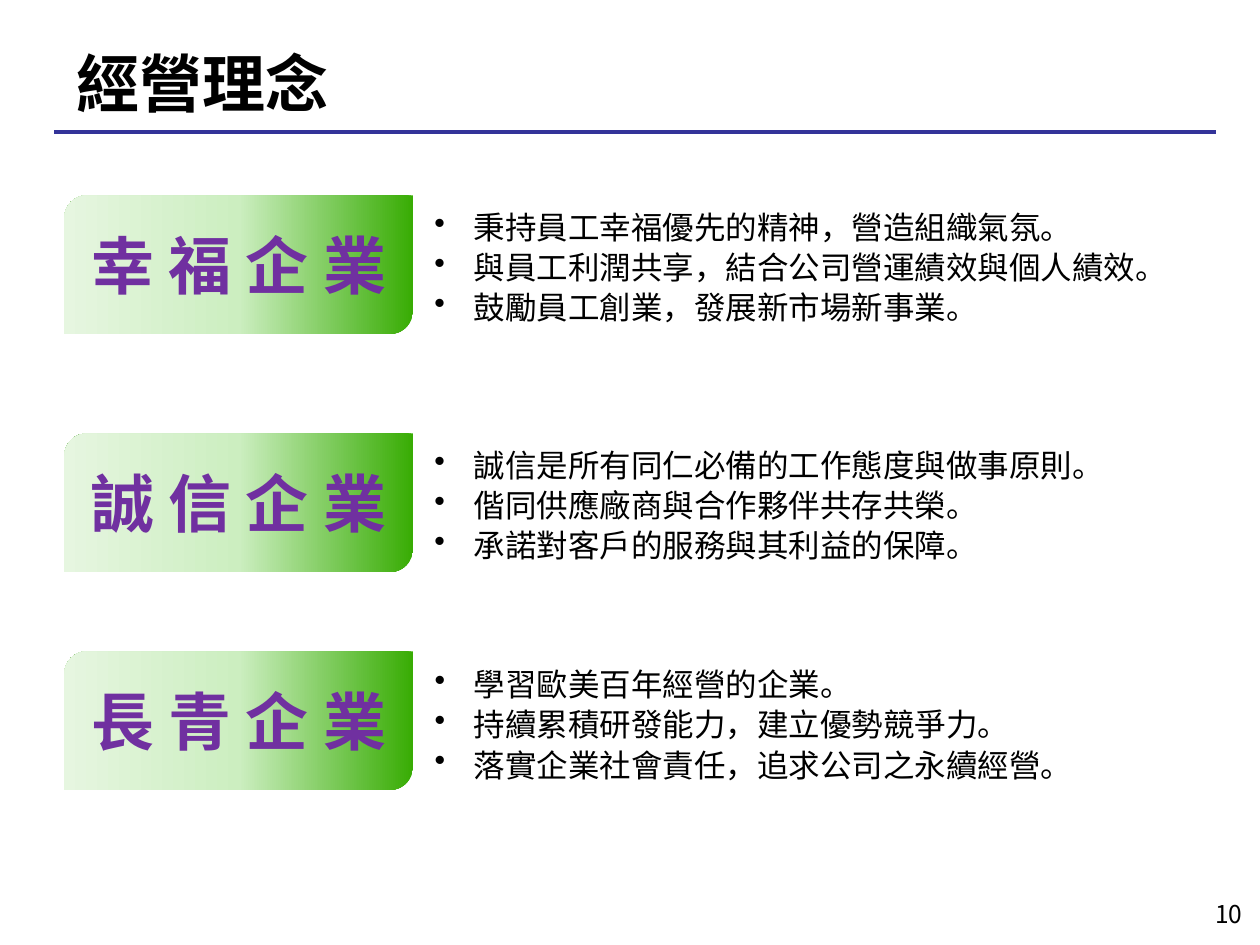
import dataclasses
import typing

import lxml.etree
import pptx
import pptx.dml.color
import pptx.enum.shapes
import pptx.enum.text
import pptx.oxml.ns
import pptx.util

Pt = pptx.util.Pt
Align = pptx.enum.text.PP_ALIGN
Anchor = pptx.enum.text.MSO_ANCHOR
qn = pptx.oxml.ns.qn


@dataclasses.dataclass(frozen=True)
class Theme:
    font: str = "Noto Sans CJK SC"
    text: str = "000000"
    rule: str = "333399"
    label: str = "7030A0"
    gradient: tuple[tuple[int, str], ...] = ((0, "38AC04"), (50, "CCEEC0"), (100, "E6F6E0"))
    heading_size: float = 36
    body_size: float = 18
    body_spacing: float = 23
    number_size: float = 14


@dataclasses.dataclass(frozen=True)
class Area:
    left: float
    top: float
    width: float
    height: float

    def lengths(self) -> list[int]:
        return [Pt(value) for value in dataclasses.astuple(self)]


@dataclasses.dataclass(frozen=True)
class Principle:
    label: str
    top: float
    text_top: float
    text_width: float
    points: tuple[str, ...]


THEME = Theme()
PRINCIPLES = (
    Principle("幸 福 企 業", 111.6, 113.8, 443.5, (
        "秉持員工幸福優先的精神，營造組織氣氛。",
        "與員工利潤共享，結合公司營運績效與個人績效。",
        "鼓勵員工創業，發展新市場新事業。",
    )),
    Principle("誠 信 企 業", 247.7, 249.8, 443.5, (
        "誠信是所有同仁必備的工作態度與做事原則。",
        "偕同供應廠商與合作夥伴共存共榮。",
        "承諾對客戶的服務與其利益的保障。",
    )),
    Principle("長 青 企 業", 372.2, 375.1, 430.6, (
        "學習歐美百年經營的企業。",
        "持續累積研發能力，建立優勢競爭力。",
        "落實企業社會責任，追求公司之永續經營。",
    )),
)


def add_span(para: typing.Any, text: str, size: float, color: str, bold: bool = False) -> None:
    span = para.add_run()
    span.text = text
    span.font.size = Pt(size)
    span.font.bold = bold
    span.font.color.rgb = pptx.dml.color.RGBColor.from_string(color)
    span.font.name = THEME.font
    span.font._element.find(qn("a:latin")).addnext(
        span.font._element.makeelement(qn("a:ea"), {"typeface": THEME.font}))


def add_box(slide: typing.Any, area: Area, anchor: Anchor) -> typing.Any:
    frame = slide.shapes.add_textbox(*area.lengths()).text_frame
    frame.word_wrap = True
    frame.vertical_anchor = anchor
    return frame


def add_line_of_text(slide: typing.Any, area: Area, text: str, size: float,
                     align: Align, bold: bool = False) -> None:
    para = add_box(slide, area, Anchor.MIDDLE).paragraphs[0]
    para.alignment = align
    add_span(para, text, size, THEME.text, bold)


def add_rule(slide: typing.Any, left: float, right: float, top: float) -> None:
    rule = slide.shapes.add_connector(
        pptx.enum.shapes.MSO_CONNECTOR.STRAIGHT, Pt(left), Pt(top), Pt(right), Pt(top))
    rule.line.width = Pt(2.25)
    rule.line.color.rgb = pptx.dml.color.RGBColor.from_string(THEME.rule)
    lxml.etree.SubElement(rule._element.spPr, qn("a:effectLst"))


def fill_gradient(shape: typing.Any) -> None:
    shape.fill.gradient()
    shape.fill.gradient_angle = 180
    stops = shape._element.spPr.find(qn("a:gradFill")).find(qn("a:gsLst"))
    for stop in list(stops):
        stops.remove(stop)
    for position, color in THEME.gradient:
        stop = lxml.etree.SubElement(stops, qn("a:gs"), pos=str(position * 1000))
        lxml.etree.SubElement(stop, qn("a:srgbClr"), val=color)


def add_label(slide: typing.Any, principle: Principle) -> None:
    area = Area(36.7, principle.top, 199.4, 79.2)
    shape = slide.shapes.add_shape(
        pptx.enum.shapes.MSO_SHAPE.ROUND_2_DIAG_RECTANGLE, *area.lengths())
    shape.shadow.inherit = False
    fill_gradient(shape)
    shape.line.fill.background()
    frame = shape.text_frame
    frame.word_wrap = True
    frame.vertical_anchor = Anchor.MIDDLE
    para = frame.paragraphs[0]
    para.alignment = Align.CENTER
    add_span(para, principle.label, THEME.heading_size, THEME.label, True)


def add_points(slide: typing.Any, principle: Principle) -> None:
    area = Area(241.2, principle.text_top, principle.text_width, 75.6)
    frame = add_box(slide, area, Anchor.TOP)
    frame.auto_size = pptx.enum.text.MSO_AUTO_SIZE.SHAPE_TO_FIT_TEXT
    for index, text in enumerate(principle.points):
        para = frame.add_paragraph() if index else frame.paragraphs[0]
        properties = para._p.get_or_add_pPr()
        properties.set("marL", str(Pt(22.5)))
        properties.set("indent", str(-Pt(22.5)))
        lxml.etree.SubElement(properties, qn("a:buChar"), char="•")
        para.line_spacing = Pt(THEME.body_spacing)
        add_span(para, text, THEME.body_size, THEME.text)


def main() -> None:
    deck = pptx.Presentation()
    deck.slide_width, deck.slide_height = Pt(720), Pt(540)
    slide = deck.slides.add_slide(deck.slide_layouts[6])
    add_line_of_text(slide, Area(684, 507.6, 33.1, 28.8), "10", THEME.number_size, Align.RIGHT)
    add_rule(slide, 31, 694.8, 75.6)
    add_line_of_text(slide, Area(36.7, 19.4, 635, 55.4), "經營理念",
                     THEME.heading_size, Align.LEFT, True)
    for principle in PRINCIPLES:
        add_points(slide, principle)
        add_label(slide, principle)
    deck.save("out.pptx")


if __name__ == "__main__":
    main()
